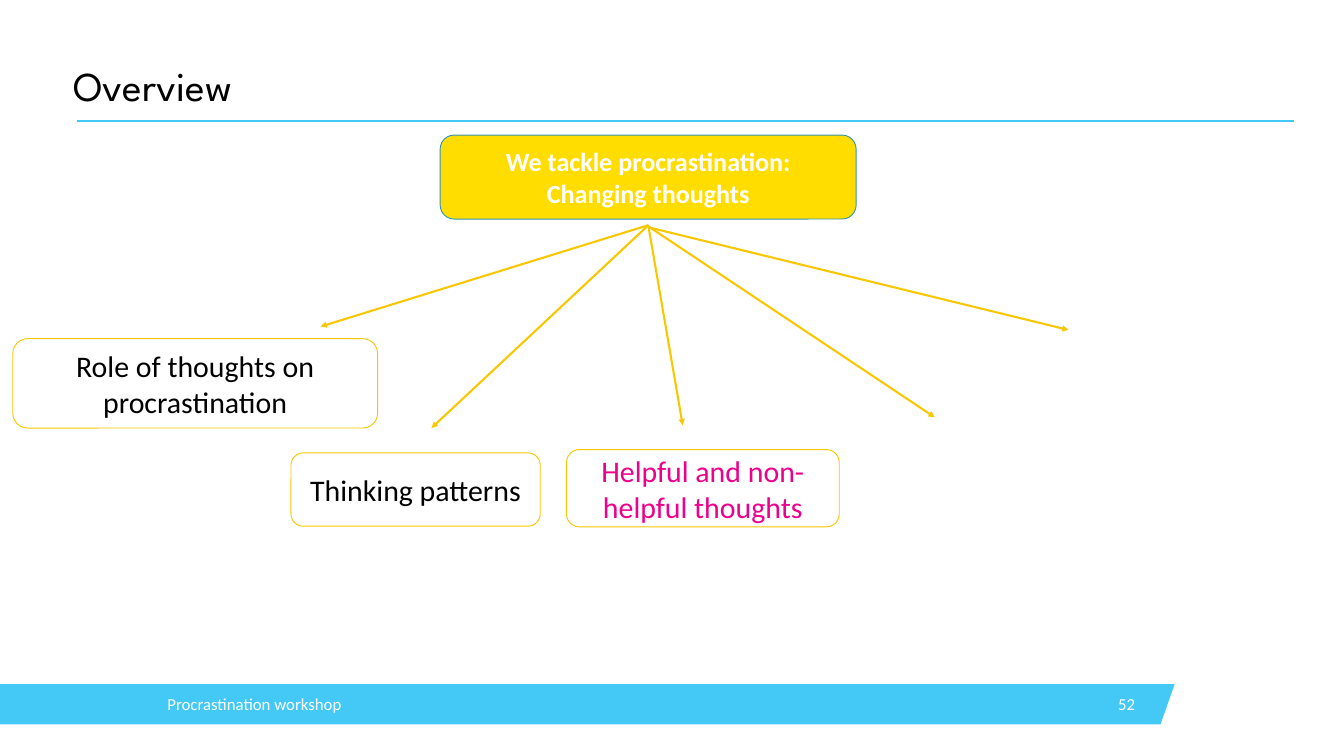
from lxml.etree import SubElement
from pptx import Presentation
from pptx.dml.color import RGBColor
from pptx.enum.shapes import MSO_CONNECTOR, MSO_SHAPE
from pptx.enum.text import MSO_ANCHOR, PP_ALIGN
from pptx.oxml.ns import qn
from pptx.util import Inches, Pt

WIDTH, HEIGHT = 20, 11.25
SKY, GOLD, YELLOW, TEAL = "44C8F5", "F9C700", "FFDD00", "3294B5"
WHITE, BLACK, PINK = "FFFFFF", "000000", "EC008C"

TITLE = "Overview"
TOPIC = "We tackle procrastination:\nChanging thoughts"
TOPIC_AREA = (6.55, 2.01, 6.19, 1.25)
# Wording, area, text colour
BRANCHES = [
    ("Role of thoughts on procrastination", (0.19, 5.04, 5.43, 1.33), BLACK),
    ("Thinking patterns", (4.33, 6.74, 3.71, 1.09), BLACK),
    ("Helpful and non-helpful thoughts", (8.43, 6.69, 4.06, 1.15), PINK),
]
# Start and end of each arrow
ARROWS = [
    ((9.65, 3.35), (4.77, 4.86)),
    ((9.65, 3.35), (6.42, 6.37)),
    ((9.68, 3.39), (15.9, 4.91)),
    ((9.65, 3.37), (13.91, 6.21)),
    ((9.65, 3.37), (10.16, 6.33)),
]
BAND_TOP, BAND_HEIGHT = 10.18, 0.6
BAND_BOTTOM = BAND_TOP + BAND_HEIGHT
BAND_OUTLINE = [(0, BAND_TOP), (17.48, BAND_TOP), (17.27, BAND_BOTTOM), (0, BAND_BOTTOM)]
# Wording, left, width, side inset, alignment
FOOTERS = [
    ("52", 15.9, 1.09, 0.1, PP_ALIGN.RIGHT),
    ("Procrastination workshop", 2.49, 6.75, 0, PP_ALIGN.LEFT),
]


def color(value):
    return RGBColor.from_string(value)


def inches(values):
    return [Inches(value) for value in values]


def write(shape, text, size, ink, align, font="Calibri", bold=False):
    frame = shape.text_frame
    frame.text = text
    frame.word_wrap = True
    frame.vertical_anchor = MSO_ANCHOR.MIDDLE
    for paragraph in frame.paragraphs:
        paragraph.alignment = align
        for span in paragraph.runs:
            span.font.name = font
            span.font.size = Pt(size)
            span.font.bold = bold
            span.font.color.rgb = color(ink)
    return frame


def set_side_insets(frame, inset):
    frame.margin_left = frame.margin_right = Inches(inset)
    frame.margin_top = frame.margin_bottom = 0


def add_line(page, start, end, ink, arrow=False):
    line = page.shapes.add_connector(MSO_CONNECTOR.STRAIGHT, *inches(start + end))
    line.line.color.rgb = color(ink)
    line.line.width = Pt(2.25)
    if arrow:
        SubElement(line.line._get_or_add_ln(), qn("a:tailEnd"), type="triangle")
    SubElement(line._element.spPr, qn("a:effectLst"))


def add_box(page, kind, area, fill, outline):
    box = page.shapes.add_shape(kind, *inches(area))
    box.shadow.inherit = False
    box.fill.solid()
    box.fill.fore_color.rgb = color(fill)
    box.line.color.rgb = color(outline)
    box.line.width = Pt(1)
    return box


def add_footer(page):
    first, *others = [inches(point) for point in BAND_OUTLINE]
    builder = page.shapes.build_freeform(*first)
    builder.add_line_segments(others)
    band = builder.convert_to_shape()
    band.shadow.inherit = False
    band.fill.solid()
    band.fill.fore_color.rgb = color(SKY)
    band.line.fill.background()
    for text, left, width, inset, align in FOOTERS:
        box = page.shapes.add_textbox(*inches((left, BAND_TOP, width, BAND_HEIGHT)))
        set_side_insets(write(box, text, 18, WHITE, align), inset)


def add_title(page):
    title = page.shapes.title
    title.left, title.top, title.width, title.height = inches((1.09, 0.97, 18.13, 0.69))
    frame = write(title, TITLE, 44, BLACK, PP_ALIGN.LEFT, font="League Spartan")
    set_side_insets(frame, 0)
    frame.paragraphs[0].line_spacing = 0.9
    add_line(page, (1.14, 1.8), (19.25, 1.8), SKY)


def add_diagram(page):
    topic = add_box(page, MSO_SHAPE.FLOWCHART_ALTERNATE_PROCESS, TOPIC_AREA, YELLOW, TEAL)
    write(topic, TOPIC, 28, WHITE, PP_ALIGN.CENTER, bold=True)
    for text, area, ink in BRANCHES:
        box = add_box(page, MSO_SHAPE.ROUNDED_RECTANGLE, area, WHITE, GOLD)
        write(box, text, 32, ink, PP_ALIGN.CENTER)
    for start, end in ARROWS:
        add_line(page, start, end, GOLD, arrow=True)


def main():
    deck = Presentation()
    deck.slide_width, deck.slide_height = inches((WIDTH, HEIGHT))
    page = deck.slides.add_slide(deck.slide_layouts.get_by_name("Title Only"))
    add_footer(page)
    add_title(page)
    add_diagram(page)
    deck.save("out.pptx")


if __name__ == "__main__":
    main()
